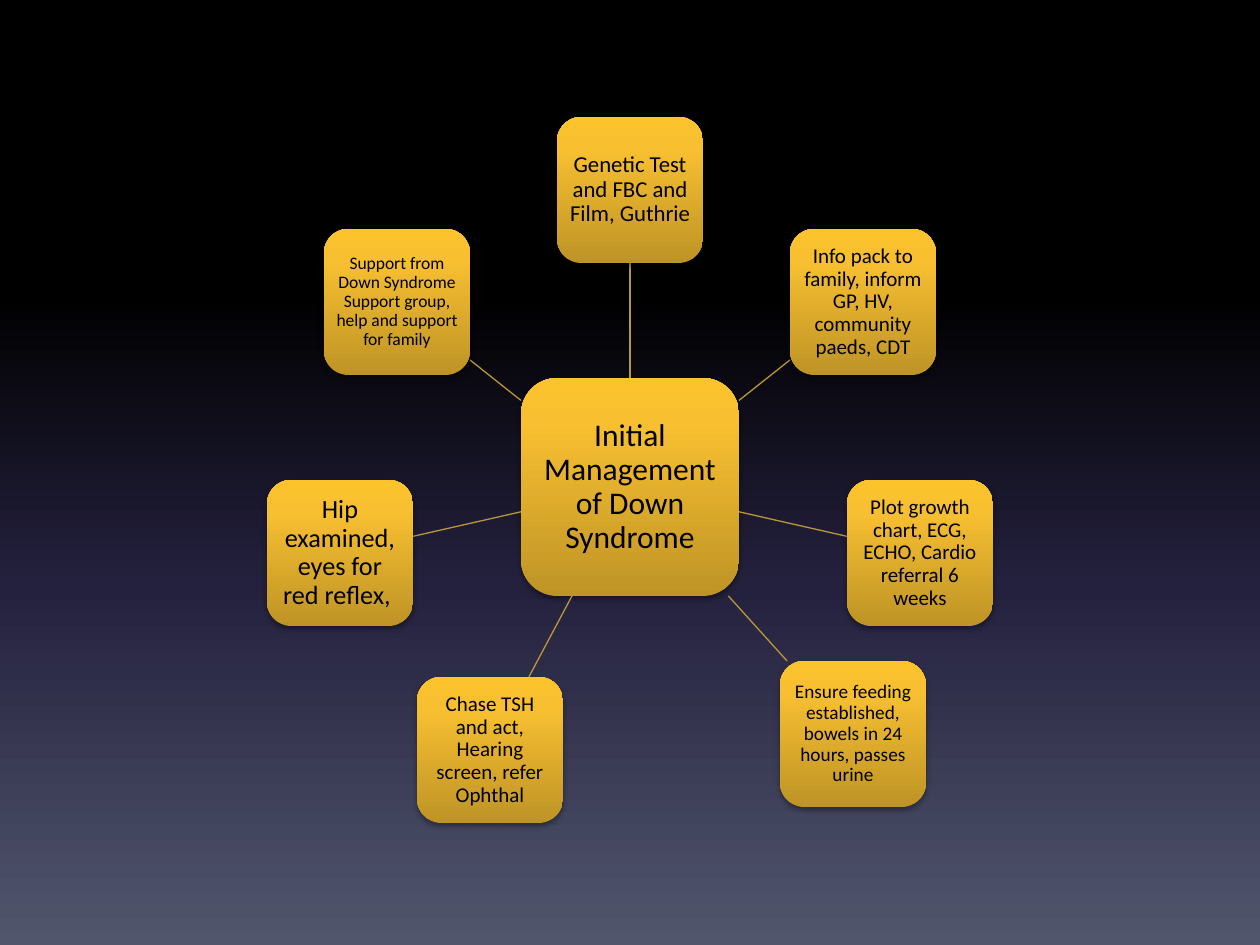
from dataclasses import dataclass

import pptx
import pptx.dml.color
import pptx.enum.shapes
import pptx.enum.text
import pptx.oxml
import pptx.oxml.ns
import pptx.util
from lxml import etree

SCALE = 914400 / 126
Stops = tuple[tuple[int, str], ...]


@dataclass(frozen=True)
class Theme:
    font: str = "Calibri"
    ink: str = "000000"
    line: str = "BA973B"
    gold: Stops = ((0, "BF9426"), (80, "F8C031"), (100, "FDC32D"))
    night: Stops = ((0, "000000"), (31, "000000"), (62, "24213E"), (100, "51566D"))
    title: int = 18
    large: int = 15
    mid: int = 13
    body: int = 12
    small: int = 11
    tiny: int = 10


@dataclass(frozen=True)
class Node:
    text: str
    x: int
    y: int
    type_size: int
    inset: int = 4
    side: int = 146


THEME = Theme()
HUB = Node("Initial Management of Down Syndrome", 630, 487, THEME.title, 6, 218)
NODES = (
    Node("Genetic Test and FBC and Film, Guthrie", 630, 190, THEME.mid, 5),
    Node("Info pack to family, inform GP, HV, community paeds, CDT", 863, 302, THEME.body),
    Node("Plot growth chart, ECG, ECHO, Cardio referral 6 weeks", 920, 553, THEME.body),
    Node("Chase TSH and act, Hearing screen, refer Ophthal", 490, 750, THEME.body),
    Node("Ensure feeding established, bowels in 24 hours, passes urine", 853, 734, THEME.small),
    Node("Hip examined, eyes for red reflex, ", 340, 553, THEME.large, 5),
    Node("Support from Down Syndrome Support group, help and support for family", 397, 302, THEME.tiny),
)


def px(count: float) -> pptx.util.Emu:
    return pptx.util.Emu(round(count * SCALE))


def color(code: str) -> pptx.dml.color.RGBColor:
    return pptx.dml.color.RGBColor.from_string(code)


def add_part(parent, tag: str, **attrs):
    return etree.SubElement(parent, pptx.oxml.ns.qn(tag), {k: str(v) for k, v in attrs.items()})


def set_fade(fill, owner, stops: Stops, angle: int) -> None:
    fill.gradient()
    fill.gradient_angle = angle
    group = next(owner.iter(pptx.oxml.ns.qn("a:gsLst")))
    for child in list(group):
        group.remove(child)
    for place, code in stops:
        add_part(add_part(group, "a:gs", pos=place * 1000), "a:srgbClr", val=code)


def add_shade(shape) -> None:
    shape.shadow.inherit = False
    effects = shape.element.spPr.find(pptx.oxml.ns.qn("a:effectLst"))
    shade = add_part(effects, "a:outerShdw", blurRad=pptx.util.Pt(3.1),
                     dist=pptx.util.Pt(1.8), dir=90 * 60000, rotWithShape=0)
    add_part(add_part(shade, "a:srgbClr", val=THEME.ink), "a:alpha", val=35000)


def add_node(slide, node: Node) -> None:
    shape = slide.shapes.add_shape(
        pptx.enum.shapes.MSO_SHAPE.ROUNDED_RECTANGLE,
        px(node.x - node.side / 2), px(node.y - node.side / 2), px(node.side), px(node.side))
    set_fade(shape.fill, shape.element, THEME.gold, 90)
    shape.line.fill.background()
    add_shade(shape)
    frame = shape.text_frame
    frame.text = node.text
    frame.word_wrap = True
    frame.vertical_anchor = pptx.enum.text.MSO_ANCHOR.MIDDLE
    frame.margin_left = frame.margin_right = px(node.inset)
    frame.margin_top = frame.margin_bottom = px(node.inset)
    para = frame.paragraphs[0]
    para.alignment = pptx.enum.text.PP_ALIGN.CENTER
    para.line_spacing = 0.9
    for run in para.runs:
        run.font.name = THEME.font
        run.font.size = pptx.util.Pt(node.type_size)
        run.font.color.rgb = color(THEME.ink)


def edge(start: Node, goal: Node) -> tuple[float, float]:
    dx, dy = goal.x - start.x, goal.y - start.y
    ratio = start.side / 2 / max(abs(dx), abs(dy))
    return start.x + dx * ratio, start.y + dy * ratio


def add_link(slide, start: Node, goal: Node) -> None:
    ends = (*edge(start, goal), *edge(goal, start))
    link = slide.shapes.add_connector(
        pptx.enum.shapes.MSO_CONNECTOR.STRAIGHT, *(px(value) for value in ends))
    link.line.color.rgb = color(THEME.line)
    link.line.width = pptx.util.Pt(0.75)
    add_part(link.element.spPr, "a:effectLst")


def main() -> None:
    deck = pptx.Presentation()
    deck.slide_width, deck.slide_height = px(1260), px(945)
    slide = deck.slides.add_slide(deck.slide_layouts[6])
    set_fade(slide.background.fill, slide.element, THEME.night, 270)
    add_node(slide, HUB)
    for node in NODES:
        add_link(slide, HUB, node)
        add_node(slide, node)
    deck.save("out.pptx")


if __name__ == "__main__":
    main()
